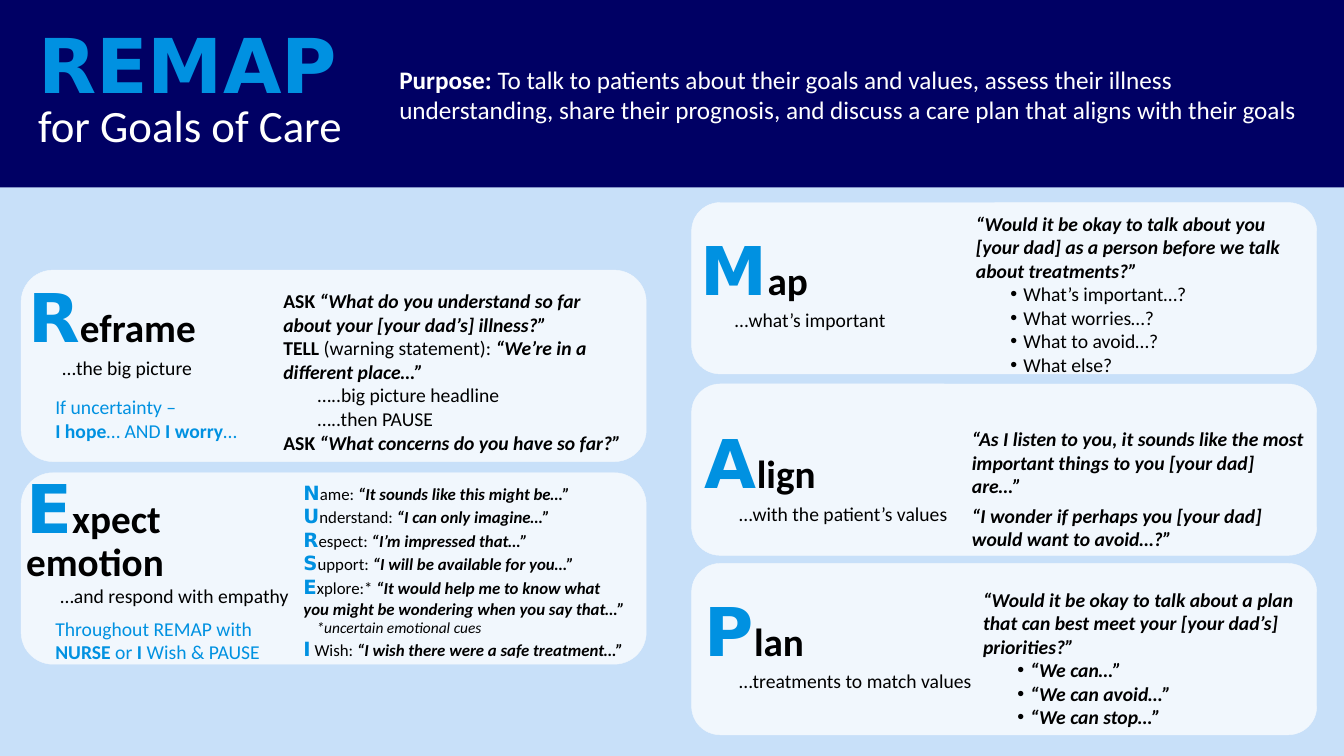
from dataclasses import dataclass

from lxml.etree import SubElement
from pptx import Presentation
from pptx.dml.color import RGBColor as RGB
from pptx.enum.shapes import MSO_SHAPE as Shape
from pptx.enum.text import MSO_ANCHOR as Anchor, MSO_AUTO_SIZE as AutoSize
from pptx.oxml.ns import qn
from pptx.util import Inches, Pt


@dataclass
class TextStyle:
    size: int
    color: str
    bold: bool = False
    italic: bool = False
    font: str = "Calibri"


class Theme:
    sky, navy, blue = "C8E0F9", "000064", "0091E1"
    white, black, edge = "FFFFFF", "000000", "F1F7FD"
    display = "DejaVu Sans"
    text = {
        "title": TextStyle(54, blue, True, font=display),
        "subtitle": TextStyle(32, white),
        "purpose": TextStyle(18, white),
        "purpose bold": TextStyle(18, white, True),
        "initial": TextStyle(48, blue, True, font=display),
        "heading": TextStyle(28, black, True),
        "body": TextStyle(14, black),
        "ask": TextStyle(14, black, True),
        "quote": TextStyle(14, black, True, True),
        "note": TextStyle(14, blue),
        "note bold": TextStyle(14, blue, True),
        "letter": TextStyle(14, blue, True, font=display),
        "nurse": TextStyle(12, black),
        "nurse quote": TextStyle(12, black, True, True),
        "cue": TextStyle(11, black, False, True),
    }


@dataclass
class Line:
    """A paragraph: (text, style) spans plus its layout."""
    spans: list
    left: float = 0
    first: float = 0
    bullet: bool = False
    before: float = 0
    spacing: float = 1


class SlideBuilder:
    def __init__(self, slide, theme):
        self.slide, self.theme = slide, theme
        fill = slide.background.fill
        fill.solid()
        fill.fore_color.rgb = RGB.from_string(theme.sky)

    def _block(self, kind, box, color):
        block = self.slide.shapes.add_shape(kind, *map(Inches, box))
        block.shadow.inherit = False
        block.fill.solid()
        block.fill.fore_color.rgb = RGB.from_string(color)
        return block

    def band(self, box):
        self._block(Shape.RECTANGLE, box, self.theme.navy).line.fill.background()

    def card(self, box):
        card = self._block(Shape.ROUNDED_RECTANGLE, box, self.theme.white)
        white = card.fill._xPr.find(qn("a:solidFill"))[0]
        SubElement(white, qn("a:alpha"), val="75000")
        card.line.color.rgb = RGB.from_string(self.theme.edge)
        card.line.width = Pt(0.32)

    def text(self, box, lines, insets=(0.1, 0.1), anchor=Anchor.TOP):
        frame = self.slide.shapes.add_textbox(*map(Inches, box)).text_frame
        frame.word_wrap = True
        frame.auto_size = AutoSize.SHAPE_TO_FIT_TEXT
        frame.vertical_anchor = anchor
        frame.margin_left, frame.margin_right = map(Inches, insets)
        for index, line in enumerate(lines):
            paragraph = frame.add_paragraph() if index else frame.paragraphs[0]
            self._fill(paragraph, line)

    def _fill(self, paragraph, line):
        props = paragraph._p.get_or_add_pPr()
        props.set("marL", str(Inches(line.left)))
        props.set("indent", str(Inches(line.first)))
        if line.bullet:
            SubElement(props, qn("a:buFont"), typeface="Arial")
            SubElement(props, qn("a:buChar"), char="•")
        if line.spacing != 1:
            paragraph.line_spacing = line.spacing
        if line.before:
            paragraph.space_before = Pt(line.before)
        for words, style_name in line.spans:
            if words == "\n":
                paragraph.add_line_break()
                continue
            run = paragraph.add_run()
            run.text = words
            style = self.theme.text[style_name]
            run.font.name, run.font.size = style.font, Pt(style.size)
            run.font.bold, run.font.italic = style.bold, style.italic
            run.font.color.rgb = RGB.from_string(style.color)

    def heading(self, box, word, tagline):
        self.text(box, [
            Line([(word[0], "initial"), (word[1:], "heading")], spacing=0.8),
            Line([(tagline, "body")], left=0.48, first=-0.14),
        ], (0, 0), Anchor.BOTTOM)

    def script(self, box, lines):
        self.text(box, lines, (0.07, 0.1))


def bullets(style, *items):
    return [Line([(item, style)], 0.47, -0.13, bullet=True) for item in items]


def nurse(word, quote):
    return Line([(word[0], "letter"), (word[1:], "nurse"), (quote, "nurse quote")])


# Top-left corner and height of each card; all share one width
CARD_WIDTH = 6.2
CARDS = [(0.21, 2.68, 1.9), (0.21, 4.69, 1.9),
         (6.86, 2.01, 1.7), (6.86, 3.81, 1.7), (6.86, 5.59, 1.7)]

HEADINGS = [
    ((0.28, 2.8, 1.81, 1.01), "Reframe", "…the big picture"),
    ((0.26, 4.72, 2.65, 1.36), "Expect emotion", "…and respond with empathy"),
    ((6.95, 2.33, 1.89, 1.01), "Map", "…what’s important"),
    ((6.99, 4.28, 2.53, 0.98), "Align", "…with the patient’s values"),
    ((6.99, 5.94, 2.75, 0.98), "Plan", "…treatments to match values"),
]

SCRIPTS = [
    # Reframe
    ((2.74, 2.82, 3.61, 1.75), [
        Line([("ASK ", "ask"), ("“What do you understand so far about your "
                                "[your dad’s] illness?”", "quote")]),
        Line([("TELL", "ask"), (" (warning statement): ", "body"),
              ("“We’re in a different place…”", "quote")]),
        Line([("…..big picture headline", "body")], left=0.34),
        Line([("…..then PAUSE", "body")], left=0.34),
        Line([("ASK ", "ask"), ("“What concerns do you have so far?”", "quote")]),
    ]),
    # Expect emotion
    ((2.94, 4.72, 3.43, 1.92), [
        nurse("Name: ", "“It sounds like this might be…”"),
        nurse("Understand: ", "“I can only imagine…”"),
        nurse("Respect: ", "“I’m impressed that…”"),
        nurse("Support: ", "“I will be available for you…”"),
        nurse("Explore:* ", "“It would help me to know what"),
        Line([("you might be wondering when you say that…”", "nurse quote")]),
        Line([("*uncertain emotional cues", "cue")], left=0.13),
        nurse("I Wish: ", "“I wish there were a safe treatment…”"),
    ]),
    # Map
    ((9.61, 2.05, 3.42, 1.75), [
        Line([("“Would it be okay to talk about you [your dad] as a person "
               "before we talk about treatments?”", "quote")]),
        *bullets("body", "What’s important…?", "What worries…?",
                 "What to avoid…?", "What else?"),
    ]),
    # Align
    ((9.57, 4.19, 3.5, 1.1), [
        Line([("“As I listen to you, it sounds like the most important things "
               "to you [your dad] are…”", "quote")]),
        Line([("“I wonder if perhaps you [your dad] would want to avoid…?”",
               "quote")], before=4.1),
    ]),
    # Plan
    ((9.68, 5.78, 3.29, 1.51), [
        Line([("“Would it be okay to talk about a plan that can best meet your "
               "[your dad’s] priorities?”", "quote")]),
        *bullets("quote", "“We can…”", "“We can avoid…”", "“We can stop…”"),
    ]),
]

NOTES = [
    ((0.45, 3.87, 2.32, 0.57), [
        Line([("If uncertainty –", "note")]),
        Line([("I hope", "note bold"), ("… AND ", "note"),
              ("I worry", "note bold"), ("…", "note")]),
    ]),
    ((0.45, 6.07, 2.32, 0.57), [
        Line([("Throughout REMAP with ", "note"), ("NURSE", "note bold"),
              (" or", "note"), (" I ", "note bold"), ("Wish & PAUSE", "note")]),
    ]),
]


def main():
    deck = Presentation()
    deck.slide_width, deck.slide_height = Inches(13.33), Inches(7.5)
    remap = SlideBuilder(deck.slides.add_slide(deck.slide_layouts[6]), Theme)

    # Header
    remap.band((0, 0, 13.33, 1.86))
    remap.text((3.89, 0.59, 9.27, 0.71), [Line([
        ("Purpose: ", "purpose bold"),
        ("To talk to patients about their goals and values, assess their illness "
         "understanding, share their prognosis, and discuss a care plan that "
         "aligns with their goals", "purpose")])], (0.07, 0.07))
    remap.text((0.28, 0.3, 3.44, 1.27), [Line([
        ("REMAP", "title"), ("\n", "title"), ("for Goals of Care", "subtitle")],
        spacing=0.8)])

    # Five steps
    for (left, top, height), heading, script in zip(CARDS, HEADINGS, SCRIPTS):
        remap.card((left, top, CARD_WIDTH, height))
        remap.heading(*heading)
        remap.script(*script)

    # Side notes
    for box, lines in NOTES:
        remap.text(box, lines)

    deck.save("out.pptx")


if __name__ == "__main__":
    main()
